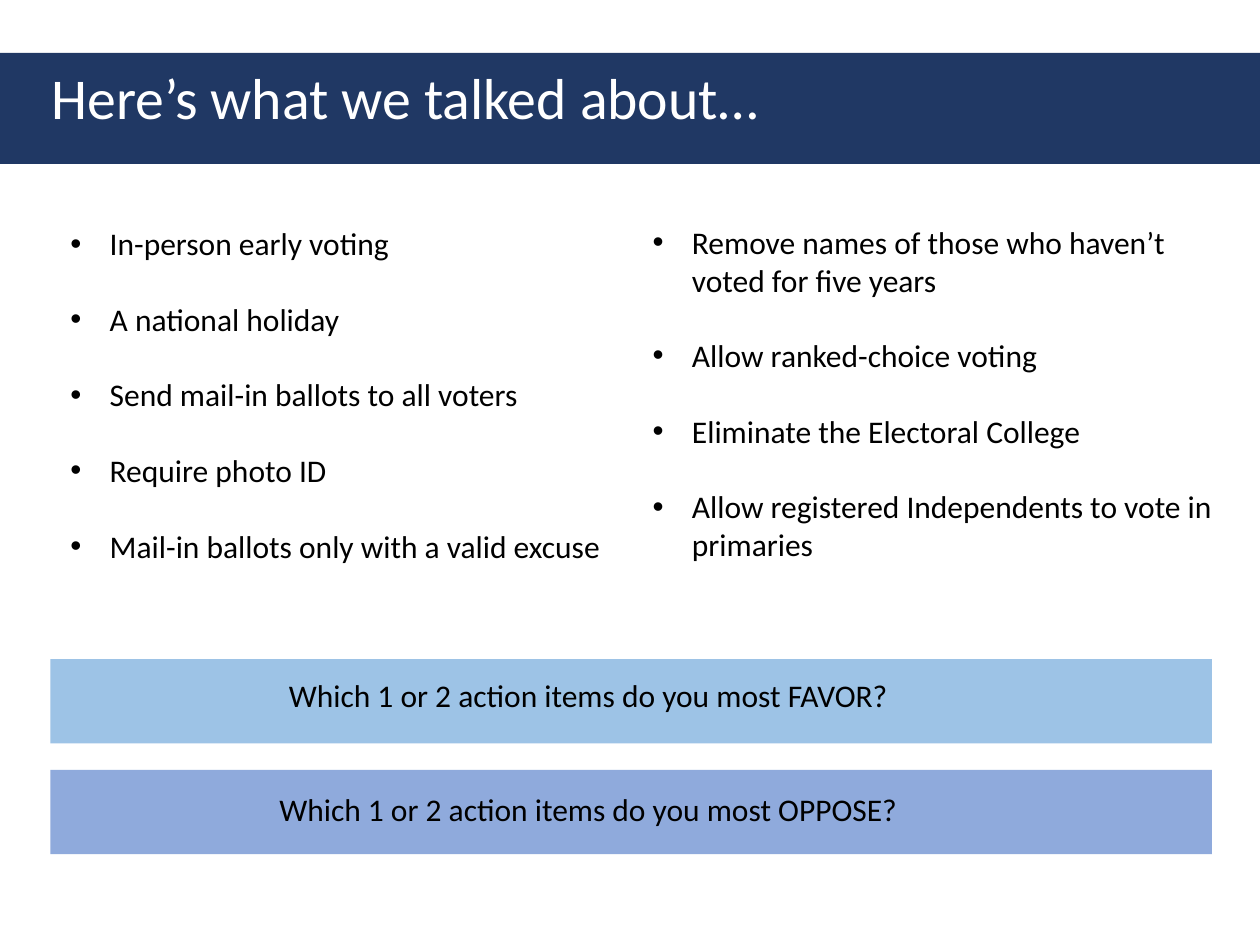
"""Build the recap slide with two bullet columns and two closing questions."""
from pptx import Presentation, util as u
from pptx.dml.color import RGBColor
from pptx.enum import shapes, text
from lxml import etree

Pt = u.Pt
LINE = 21.6


def paint(color_format, color):
    color_format.rgb = RGBColor.from_string(color)


def add_text(box, lines, size, color, gap=0):
    left, top, width, height = box
    frame = slide.shapes.add_textbox(Pt(left), Pt(top), Pt(width), Pt(height)).text_frame
    frame.word_wrap = True
    for i, line in enumerate(lines):
        paragraph = frame.paragraphs[0] if i == 0 else frame.add_paragraph()
        paragraph.text = line
        paragraph.font.name = "Calibri"
        paragraph.font.size = Pt(size)
        paint(paragraph.font.color, color)
        if i < len(lines) - 1:
            paragraph.space_after = Pt(gap)
    return frame


deck = Presentation()
deck.slide_width, deck.slide_height = Pt(720), Pt(540)
slide = deck.slides.add_slide(deck.slide_layouts[6])

bands = [
    (28.8, 439.9, 663.8, 48.2, "8FAADC"),
    (28.8, 376.6, 663.8, 48.2, "9DC3E6"),
    (0, 30.2, 720, 63.4, "203864"),
]
for left, top, width, height, color in bands:
    band = slide.shapes.add_shape(
        shapes.MSO_SHAPE.RECTANGLE, Pt(left), Pt(top), Pt(width), Pt(height))
    band.shadow.inherit = False
    band.fill.solid()
    paint(band.fill.fore_color, color)
    band.line.fill.background()

title = add_text((22.3, 30.2, 648, 55.4), ["Here’s what we talked about…"], 33, "FFFFFF")
title.vertical_anchor = text.MSO_ANCHOR.MIDDLE
title.paragraphs[0].line_spacing = 0.9

columns = [
    ((33.1, 124.6, 334.8, 203.8), [
        "In-person early voting",
        "A national holiday",
        "Send mail-in ballots to all voters",
        "Require photo ID",
        "Mail-in ballots only with a valid excuse",
    ]),
    ((365.8, 123.8, 349.2, 203.8), [
        "Remove names of those who haven’t voted for five years",
        "Allow ranked-choice voting",
        "Eliminate the Electoral College",
        "Allow registered Independents to vote in primaries",
    ]),
]
for box, ideas in columns:
    for paragraph in add_text(box, ideas, 18, "000000", LINE).paragraphs:
        properties = paragraph._p.get_or_add_pPr()
        properties.set("marL", str(Pt(22.5)))
        properties.set("indent", str(-Pt(22.5)))
        namespace = properties.nsmap["a"]
        bullet_font = etree.Element(f"{{{namespace}}}buFont", typeface="Arial")
        bullet = etree.Element(f"{{{namespace}}}buChar", char="•")
        defaults = properties.find(f"{{{namespace}}}defRPr")
        defaults.addprevious(bullet_font)
        defaults.addprevious(bullet)

questions = [f"Which 1 or 2 action items do you most {stance}?" for stance in ("FAVOR", "OPPOSE")]
for paragraph in add_text((28.8, 383, 614.9, 94.3), questions, 18, "000000", 2 * LINE).paragraphs:
    paragraph.alignment = text.PP_ALIGN.CENTER

deck.save("out.pptx")
